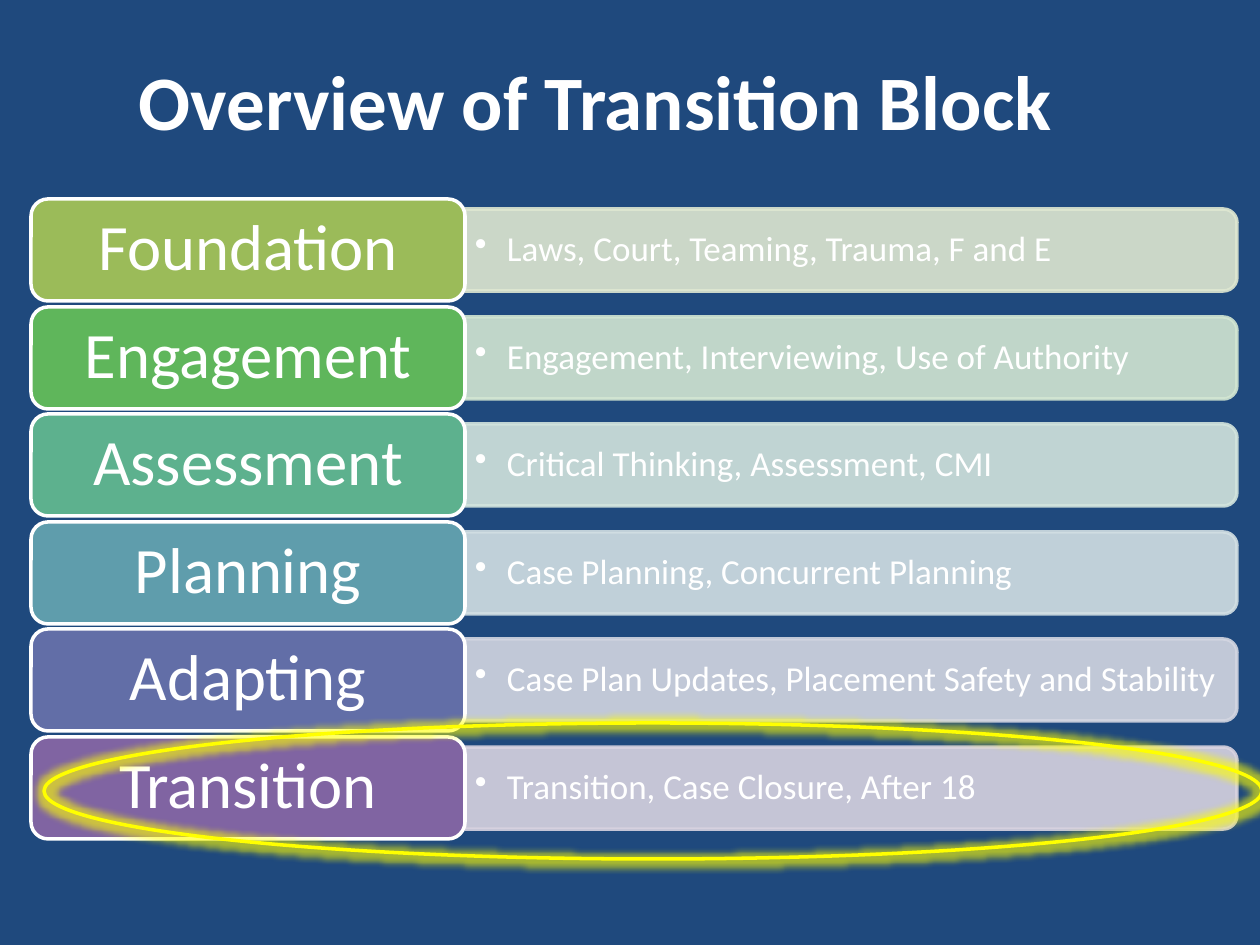
from lxml.etree import SubElement
from pptx import Presentation
from pptx.dml.color import RGBColor
from pptx.enum.shapes import MSO_SHAPE as Shape
from pptx.enum.text import MSO_ANCHOR as Anchor, PP_ALIGN as Align
from pptx.oxml.ns import qn
from pptx.util import Emu, Pt

ROWS = [
    ("Foundation", "Laws, Court, Teaming, Trauma, F and E", "9BBB59", "DEE7D1"),
    ("Engagement", "Engagement, Interviewing, Use of Authority", "5FB65B", "D2E6D2"),
    ("Assessment", "Critical Thinking, Assessment, CMI", "5DB18E", "D2E4DD"),
    ("Planning", "Case Planning, Concurrent Planning", "5F9DAC", "D2DFE3"),
    ("Adapting", "Case Plan Updates, Placement Safety and Stability", "626EA7", "D3D6E1"),
    ("Transition", "Transition, Case Closure, After 18", "8064A2", "D8D3E0"),
]
FIRST_TOP, LAST_TOP = 199, 737


def px(length):
    return Emu(round(length * 914400 / 126))


def color(value):
    return RGBColor.from_string(value)


def add_alpha(color_node, percent):
    SubElement(color_node, qn("a:alpha"), val=str(percent * 1000))


class SlideBuilder:
    font = "Calibri"
    ink = "FFFFFF"
    background = "1F497D"
    highlight = "FFFF00"

    def __init__(self, deck):
        self.slide = deck.slides.add_slide(deck.slide_layouts[6])
        fill = self.slide.background.fill
        fill.solid()
        fill.fore_color.rgb = color(self.background)

    def label(self, box, text, size, align=Align.LEFT, bold=False, margins=(13, 6), spacing=1):
        frame = box.text_frame
        frame.text = text
        frame.word_wrap = True
        frame.vertical_anchor = Anchor.MIDDLE
        frame.margin_left = frame.margin_right = px(margins[0])
        frame.margin_top = frame.margin_bottom = px(margins[1])
        para = frame.paragraphs[0]
        para.alignment = align
        para.line_spacing = spacing
        font = para.runs[0].font
        font.name, font.size, font.bold = self.font, Pt(size), bold
        font.color.rgb = color(self.ink)
        return para

    def shape(self, kind, left, top, width, height, fill, line):
        shape = self.slide.shapes.add_shape(kind, px(left), px(top), px(width), px(height))
        shape.shadow.inherit = False
        if fill:
            shape.fill.solid()
            shape.fill.fore_color.rgb = color(fill)
        else:
            shape.fill.background()
        shape.line.color.rgb = color(line)
        shape.line.width = Pt(2)
        return shape

    def text_box(self, left, top, width, height, text, size, **style):
        box = self.slide.shapes.add_textbox(px(left), px(top), px(width), px(height))
        return self.label(box, text, size, **style)

    def badge(self, left, top, width, height, text, fill):
        badge = self.shape(Shape.ROUNDED_RECTANGLE, left, top, width, height, fill, self.ink)
        self.label(badge, text, 37, align=Align.CENTER, margins=(24, 15), spacing=0.9)

    def bar(self, left, top, width, height, fill):
        shift = (width - height) // 2
        bar = self.shape(Shape.ROUND_2_SAME_RECTANGLE, left + shift, top - shift,
                         height, width, fill, fill)
        bar.rotation = 90
        for color_node in bar._element.spPr.iter(qn("a:srgbClr")):
            add_alpha(color_node, 90)

    def bullet(self, left, top, width, height, text):
        para = self.text_box(left, top, width, height, text, 20, margins=(10, 5), spacing=0.9)
        properties = para._p.get_or_add_pPr()
        properties.set("marL", str(px(32)))
        properties.set("indent", str(px(-32)))
        SubElement(properties, qn("a:buChar"), char="•")

    def glowing_ring(self, left, top, width, height):
        ring = self.shape(Shape.OVAL, left, top, width, height, None, self.highlight)
        effects = ring._element.spPr.find(qn("a:effectLst"))
        glow = SubElement(effects, qn("a:glow"), rad=str(Pt(8)))
        add_alpha(SubElement(glow, qn("a:srgbClr"), val=self.highlight), 60)


def main():
    deck = Presentation()
    deck.slide_width, deck.slide_height = px(1260), px(945)
    page = SlideBuilder(deck)
    page.text_box(126, 21, 1134, 158, "Overview of Transition Block", 44, bold=True)
    for index, (stage, topics, badge_fill, bar_fill) in enumerate(ROWS):
        top = FIRST_TOP + round(index * (LAST_TOP - FIRST_TOP) / (len(ROWS) - 1))
        page.bar(465, top + 10, 772, 82, bar_fill)
        page.bullet(465, top + 14, 767, 74, topics)
        page.badge(31, top, 434, 102, stage, badge_fill)
    page.glowing_ring(44, 723, 1218, 136)
    deck.save("out.pptx")


if __name__ == "__main__":
    main()
